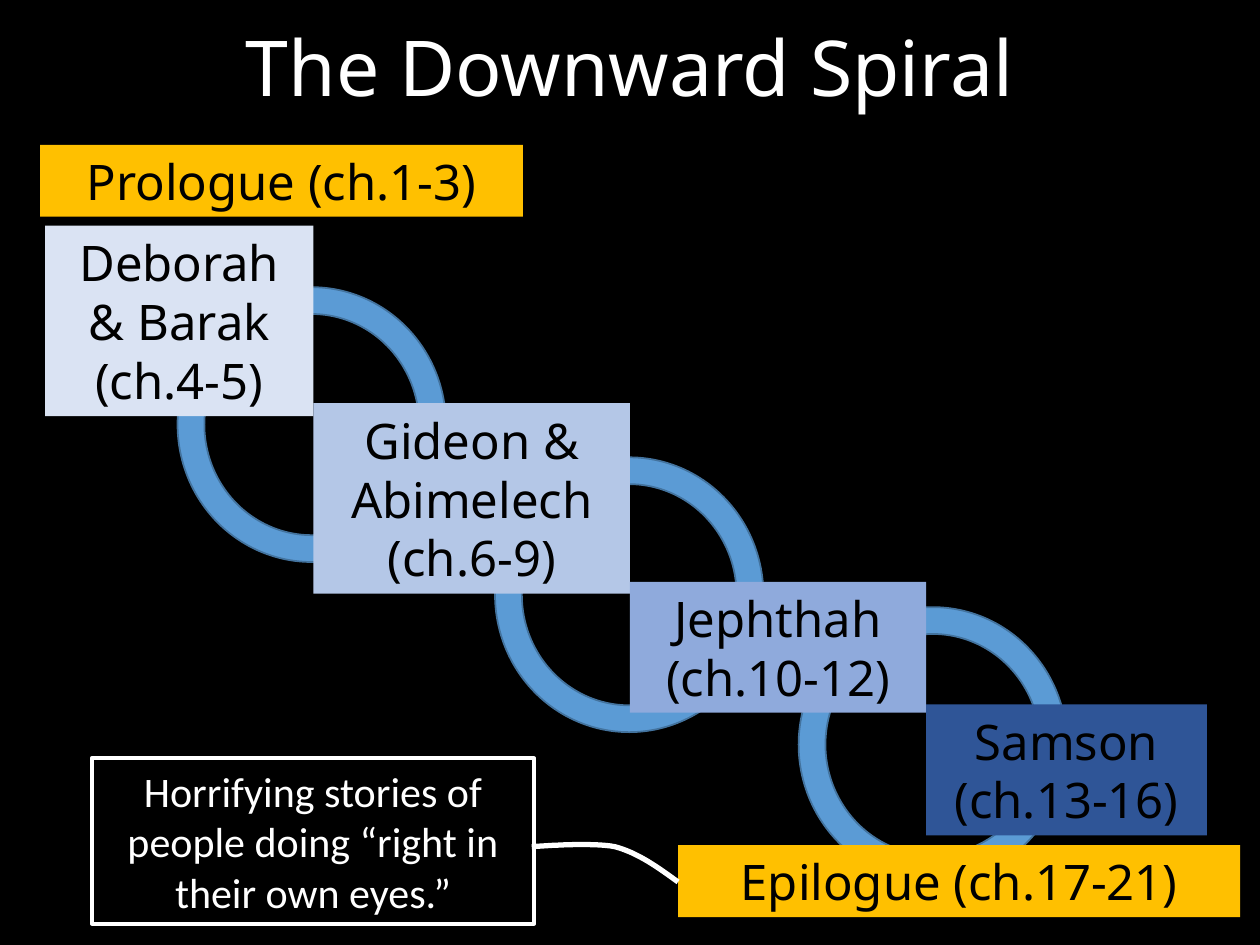
from pptx import Presentation
from pptx.dml.color import RGBColor
from pptx.enum.shapes import MSO_SHAPE
from pptx.enum.text import MSO_ANCHOR, PP_ALIGN
from pptx.util import Cm, Pt

TITLE = "The Downward Spiral"
NOTE = "Horrifying stories of people doing “right in their own eyes.”"
BANNERS = [
    ("Prologue (ch.1-3)", 0.81, 2.92, 9.73),
    ("Epilogue (ch.17-21)", 13.67, 17.04, 11.33),
]
BANNER_HEIGHT = 1.45
JUDGES = [
    ("Deborah & Barak (ch.4-5)", 4.55, 5.41, 3.84, "DAE3F3"),
    ("Gideon & Abimelech (ch.6-9)", 8.13, 6.38, 3.84, "B4C7E7"),
    ("Jephthah (ch.10-12)", 11.73, 5.97, 2.64, "8FAADC"),
    ("Samson (ch.13-16)", 14.2, 5.66, 2.64, "2F5597"),
]
JUDGES_LEFT = 0.91
RINGS = [(16.1, 12.24), (9.98, 9.22), (3.58, 5.79)]
RING_WIDTH, RING_HEIGHT = 5.41, 5.54
CURVES = [
    [(13.67, 17.78), (13.28, 17.5), (12.88, 17.2), (12.4, 17.07)],
    [(12.4, 17.07), (11.91, 16.97), (10.72, 17.07), (10.72, 17.07)],
]
CURVE_STEPS = 16


def color(value):
    return RGBColor.from_string(value)


def write(shape, text, size, font, ink):
    frame = shape.text_frame
    frame.word_wrap = True
    frame.vertical_anchor = MSO_ANCHOR.MIDDLE
    para = frame.paragraphs[0]
    para.alignment = PP_ALIGN.CENTER
    span = para.add_run()
    span.text = text
    span.font.size = Pt(size)
    span.font.name = font
    span.font.color.rgb = color(ink)
    return para


def style(shape, fill=None, line=None, line_width=1):
    shape.shadow.inherit = False
    if fill:
        shape.fill.solid()
        shape.fill.fore_color.rgb = color(fill)
    else:
        shape.fill.background()
    if line:
        shape.line.color.rgb = color(line)
        shape.line.width = Pt(line_width)
    else:
        shape.line.fill.background()


def add_shape(slide, kind, left, top, width, height, **look):
    shape = slide.shapes.add_shape(kind, Cm(left), Cm(top), Cm(width), Cm(height))
    style(shape, **look)
    return shape


def add_label(slide, text, left, top, width, height, fill):
    box = add_shape(slide, MSO_SHAPE.RECTANGLE, left, top, width, height, fill=fill)
    write(box, text, 28, "Noto Sans", "000000")


def curve_point(controls, t):
    weights = ((1 - t) ** 3, 3 * t * (1 - t) ** 2, 3 * t * t * (1 - t), t ** 3)
    return tuple(
        Cm(sum(weight * point[axis] for weight, point in zip(weights, controls)))
        for axis in (0, 1)
    )


def add_curve(slide):
    points = [
        curve_point(controls, step / CURVE_STEPS)
        for controls in CURVES
        for step in range(1, CURVE_STEPS + 1)
    ]
    start_x, start_y = curve_point(CURVES[0], 0)
    builder = slide.shapes.build_freeform(start_x, start_y)
    builder.add_line_segments(points, close=False)
    style(builder.convert_to_shape(), line="FFFFFF", line_width=3)


def main():
    deck = Presentation()
    deck.slide_width, deck.slide_height = Cm(25.4), Cm(19.05)
    slide = deck.slides.add_slide(deck.slide_layouts[6])
    slide.background.fill.solid()
    slide.background.fill.fore_color.rgb = color("000000")

    for left, top in RINGS:
        ring = add_shape(slide, MSO_SHAPE.DONUT, left, top, RING_WIDTH, RING_HEIGHT,
                         fill="5B9BD5", line="43739E")
        ring.adjustments[0] = 0.1

    title = slide.shapes.add_textbox(Cm(1.75), Cm(0.41), Cm(21.89), Cm(2.08))
    write(title, TITLE, 44, "Noto Sans", "FFFFFF").line_spacing = 0.9

    for text, left, top, width in BANNERS:
        add_label(slide, text, left, top, width, BANNER_HEIGHT, "FFC000")

    left = JUDGES_LEFT
    for text, top, width, height, fill in JUDGES:
        add_label(slide, text, left, top, width, height, fill)
        left += width

    note = add_shape(slide, MSO_SHAPE.RECTANGLE, 1.85, 15.29, 8.92, 3.33,
                     line="FFFFFF", line_width=2.25)
    write(note, NOTE, 24, "Calibri", "FFFFFF")
    add_curve(slide)

    deck.save("out.pptx")


if __name__ == "__main__":
    main()
